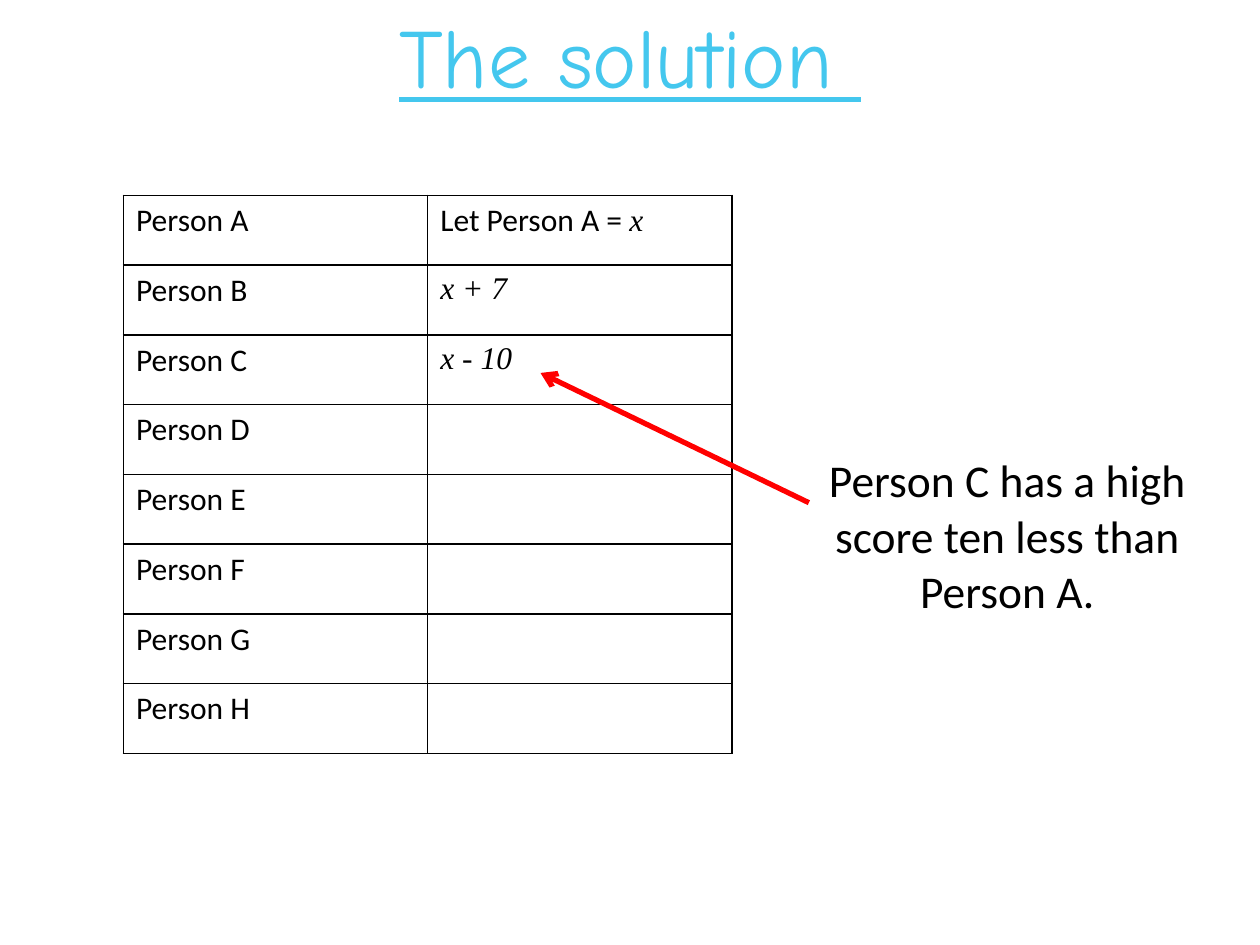
"""Build the solution slide with a score table and a callout arrow."""
import pptx
import pptx.util
import pptx.dml.color
import pptx.enum.shapes
import pptx.enum.text
import pptx.oxml
import pptx.oxml.ns

Inches, Pt = pptx.util.Inches, pptx.util.Pt
CENTER = pptx.enum.text.PP_ALIGN.CENTER
NS = pptx.oxml.ns.nsdecls("a")
COLORS = {"title": "44C7EE", "text": "000000", "grid": "000000", "paper": "FFFFFF", "arrow": "FF0000"}


def style_run(r, font, size, color="text", italic=False):
    r.font.name = font
    r.font.size = Pt(size)
    r.font.italic = italic
    r.font.color.rgb = pptx.dml.color.RGBColor.from_string(COLORS[color])


def style_cell(cell, border):
    cell.fill.background()
    tcPr = cell._tc.get_or_add_tcPr()
    for i, side in enumerate(("lnL", "lnR", "lnT", "lnB")):
        tcPr.insert(i, pptx.oxml.parse_xml(
            f'<a:{side} {NS} w="12700"><a:solidFill><a:srgbClr val="{COLORS[border]}"/>'
            f'</a:solidFill></a:{side}>'))


prs = pptx.Presentation()
prs.slide_width, prs.slide_height = Inches(10), Inches(7.5)
s = prs.slides.add_slide(prs.slide_layouts[6])

title = s.shapes.add_textbox(Inches(0), Inches(0), Inches(10), Inches(0.9))
tf = title.text_frame
tf.word_wrap = True
tf.margin_left = tf.margin_right = Inches(0.09)
tf.margin_top = tf.margin_bottom = Inches(0.04)
p = tf.paragraphs[0]
p.text = "The solution "
p.alignment = CENTER
style_run(p.runs[0], "Comic Neue", 48, "title")
p.runs[0].font.underline = True

people = "ABCDEFGH"
expressions = {"A": ("Let Person A = ", "x"), "B": ("", "x + 7"), "C": ("", "x - 10")}
scores = s.shapes.add_table(len(people), 2, Inches(0.98), Inches(1.55), Inches(4.83), Inches(4.43)).table
scores.first_row = scores.horz_banding = False
for row, person in zip(scores.rows, people):
    name, score = row.cells
    for cell in row.cells:
        style_cell(cell, "grid")
    p = name.text_frame.paragraphs[0]
    p.text = f"Person {person}"
    style_run(p.runs[0], "Calibri", 18)
    lead, maths = expressions.get(person, ("", ""))
    p = score.text_frame.paragraphs[0]
    if lead:
        p.text = lead
        style_run(p.runs[0], "Calibri", 18)
    if maths:
        r = p.add_run()
        r.text = maths
        style_run(r, "Times New Roman", 18, italic=True)

callout = s.shapes.add_table(1, 1, Inches(6.5), Inches(3.36), Inches(2.99), Inches(1.8)).table
callout.first_row = callout.horz_banding = False
cell = callout.cell(0, 0)
style_cell(cell, "paper")
cell.vertical_anchor = pptx.enum.text.MSO_ANCHOR.MIDDLE
cell.margin_left = cell.margin_right = cell.margin_top = Inches(0.01)
cell.margin_bottom = Inches(0)
p = cell.text_frame.paragraphs[0]
p.text = "Person C has a high score ten less than Person A."
p.alignment = CENTER
style_run(p.runs[0], "Calibri", 26)

arrow = s.shapes.add_connector(
    pptx.enum.shapes.MSO_CONNECTOR.STRAIGHT, Inches(6.42), Inches(3.99), Inches(4.29), Inches(2.96))
arrow.line.color.rgb = pptx.dml.color.RGBColor.from_string(COLORS["arrow"])
arrow.line.width = Pt(3)
arrow.line._get_or_add_ln().append(pptx.oxml.parse_xml(f'<a:tailEnd {NS} type="arrow"/>'))
arrow._element.spPr.append(pptx.oxml.parse_xml(f"<a:effectLst {NS}/>"))

prs.save("out.pptx")
